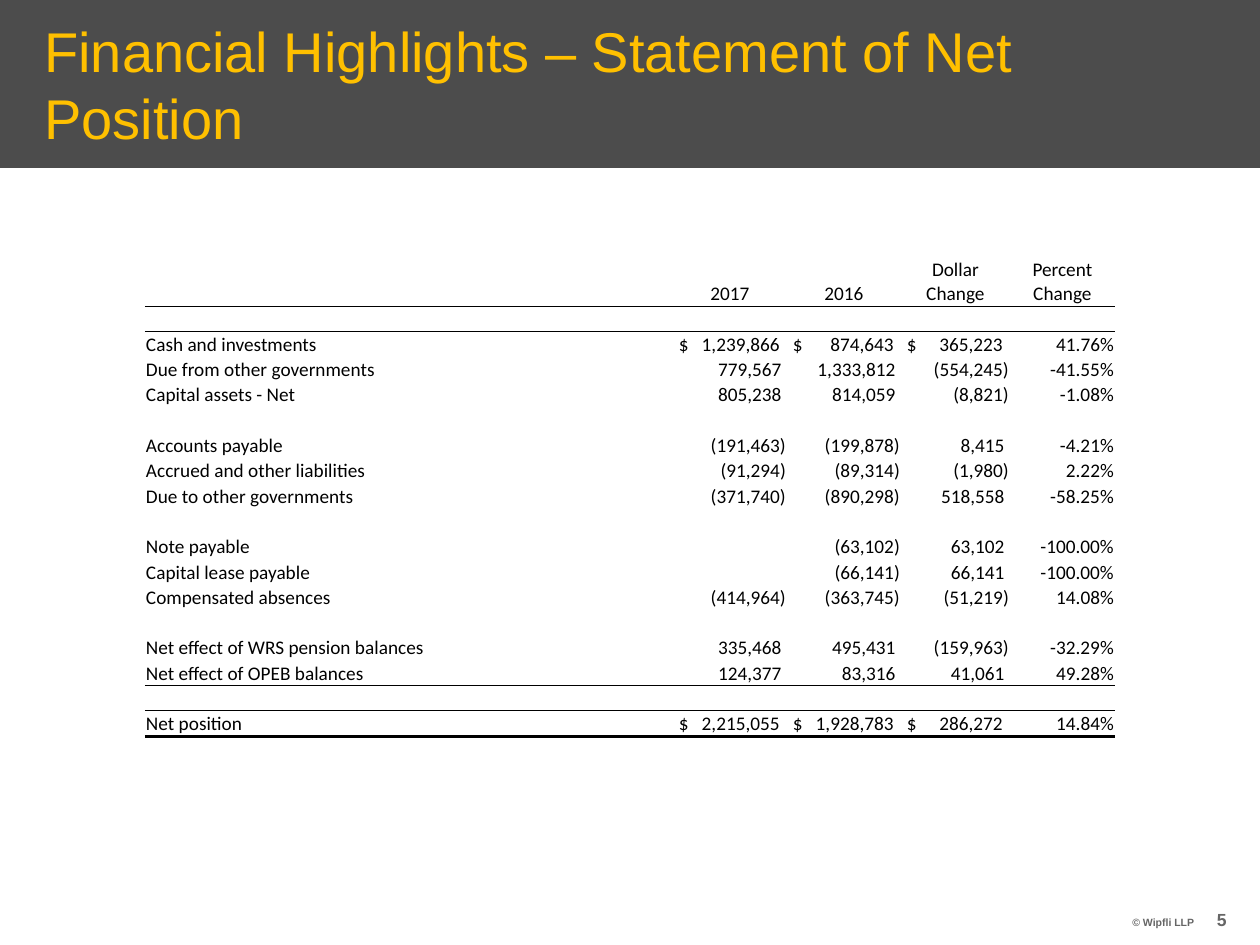
from lxml import etree
from pptx import Presentation
from pptx.dml.color import RGBColor
from pptx.enum.shapes import MSO_SHAPE as Shape
from pptx.enum.text import MSO_ANCHOR as Anchor, PP_ALIGN as Align
from pptx.oxml.ns import qn
from pptx.util import Pt

PX = 914400 // 126  # EMU per px

TITLE = "Financial Highlights – Statement of Net Position"
COPYRIGHT = "© Wipfli LLP"
PAGE = "5"
HEADER = ["", "2017", "2016", "Dollar Change", "Percent Change"]
BLANK = [""] * 5
BODY = [
    BLANK,
    ["Cash and investments", "$ 1,239,866", "$ 874,643", "$ 365,223", "41.76%"],
    ["Due from other governments", "779,567", "1,333,812", "(554,245)", "-41.55%"],
    ["Capital assets - Net", "805,238", "814,059", "(8,821)", "-1.08%"],
    BLANK,
    ["Accounts payable", "(191,463)", "(199,878)", "8,415", "-4.21%"],
    ["Accrued and other liabilities", "(91,294)", "(89,314)", "(1,980)", "2.22%"],
    ["Due to other governments", "(371,740)", "(890,298)", "518,558", "-58.25%"],
    BLANK,
    ["Note payable", "", "(63,102)", "63,102", "-100.00%"],
    ["Capital lease payable", "", "(66,141)", "66,141", "-100.00%"],
    ["Compensated absences", "(414,964)", "(363,745)", "(51,219)", "14.08%"],
    BLANK,
    ["Net effect of WRS pension balances", "335,468", "495,431", "(159,963)", "-32.29%"],
    ["Net effect of OPEB balances", "124,377", "83,316", "41,061", "49.28%"],
    BLANK,
    ["Net position", "$ 2,215,055", "$ 1,928,783", "$ 286,272", "14.84%"],
    BLANK,
]
ROWS = [HEADER] + BODY
RULES = {0: 0.5, 15: 0.5, 17: 2}  # row above the rule: width in points

COLUMNS = [528, 114, 114, 109, 105]
TABLE_LEFT, TABLE_TOP = 145, 256
HEADER_HEIGHT, BODY_HEIGHT = 50, 456
DOLLAR_INDENT, DOLLAR_TAB_GAP = 6, 13
NO_STYLE = "{2D5ABB26-0587-4C30-8999-92F81FD0307C}"


def color(value):
    return RGBColor.from_string(value)


def set_font(paragraph, name, size, value, bold=False):
    font = paragraph.font
    font.name, font.size, font.bold = name, Pt(size), bold
    font.color.rgb = color(value)


def add_text(slide, box, text, size, value, bold=False, align=Align.LEFT, anchor=Anchor.MIDDLE):
    frame = slide.shapes.add_textbox(*(v * PX for v in box)).text_frame
    frame.word_wrap = True
    frame.vertical_anchor = anchor
    paragraph = frame.paragraphs[0]
    paragraph.text = text
    paragraph.alignment = align
    set_font(paragraph, "Arial", size, value, bold)


def add_rule(cell, side, width):
    line = etree.SubElement(cell._tc.get_or_add_tcPr(), qn(f"a:{side}"), w=str(Pt(width)))
    fill = etree.SubElement(line, qn("a:solidFill"))
    etree.SubElement(fill, qn("a:srgbClr"), val="000000")


def add_right_tab(paragraph, position):
    tabs = etree.SubElement(paragraph._p.get_or_add_pPr(), qn("a:tabLst"))
    etree.SubElement(tabs, qn("a:tab"), pos=str(position * PX), algn="r")


def fill_cell(cell, text, row, column):
    cell.margin_left = cell.margin_right = cell.margin_top = PX
    cell.margin_bottom = 0
    cell.vertical_anchor = Anchor.BOTTOM
    paragraph = cell.text_frame.paragraphs[0]
    if not text:
        # Keeps an empty row as low as the others
        paragraph._p.get_or_add_endParaRPr().set("sz", "1100")
    elif text.startswith("$"):
        cell.margin_left = DOLLAR_INDENT * PX
        add_right_tab(paragraph, COLUMNS[column] - DOLLAR_TAB_GAP)
        paragraph.text = text.replace(" ", "\t")
    else:
        # A positive amount leaves room for the closing bracket
        positive = row > 0 and 0 < column < 4 and not text.endswith(")")
        paragraph.text = text + " " if positive else text
        if column:
            paragraph.alignment = Align.RIGHT if row else Align.CENTER
    set_font(paragraph, "Calibri", 11, "000000")
    if row - 1 in RULES:
        add_rule(cell, "lnT", RULES[row - 1])
    if row in RULES:
        add_rule(cell, "lnB", RULES[row])
    cell.fill.background()


def add_statement(slide):
    table = slide.shapes.add_table(
        len(ROWS), len(COLUMNS), TABLE_LEFT * PX, TABLE_TOP * PX,
        sum(COLUMNS) * PX, (HEADER_HEIGHT + BODY_HEIGHT) * PX).table
    table.first_row = table.horz_banding = False
    table._tbl.tblPr.find(qn("a:tableStyleId")).text = NO_STYLE
    for column, width in enumerate(COLUMNS):
        table.columns[column].width = width * PX
    for row, texts in enumerate(ROWS):
        height = BODY_HEIGHT / len(BODY) if row else HEADER_HEIGHT
        table.rows[row].height = int(height * PX)
        for column, text in enumerate(texts):
            fill_cell(table.cell(row, column), text, row, column)


def main():
    deck = Presentation()
    deck.slide_width, deck.slide_height = 1260 * PX, 945 * PX
    slide = deck.slides.add_slide(deck.slide_layouts[6])

    # Title band
    band = slide.shapes.add_shape(Shape.RECTANGLE, 0, 0, 1260 * PX, 168 * PX)
    band.shadow.inherit = False
    band.fill.solid()
    band.fill.fore_color.rgb = color("4C4C4C")
    band.line.fill.background()

    # Footer and title
    add_text(slide, (1120, 910, 88, 25), COPYRIGHT, 6, "666666", True, anchor=Anchor.TOP)
    add_text(slide, (32, 21, 1197, 126), TITLE, 32, "FFC000")
    add_text(slide, (1176, 903, 63, 32), PAGE, 10, "666666", True, Align.RIGHT)

    add_statement(slide)
    deck.save("out.pptx")


if __name__ == "__main__":
    main()
